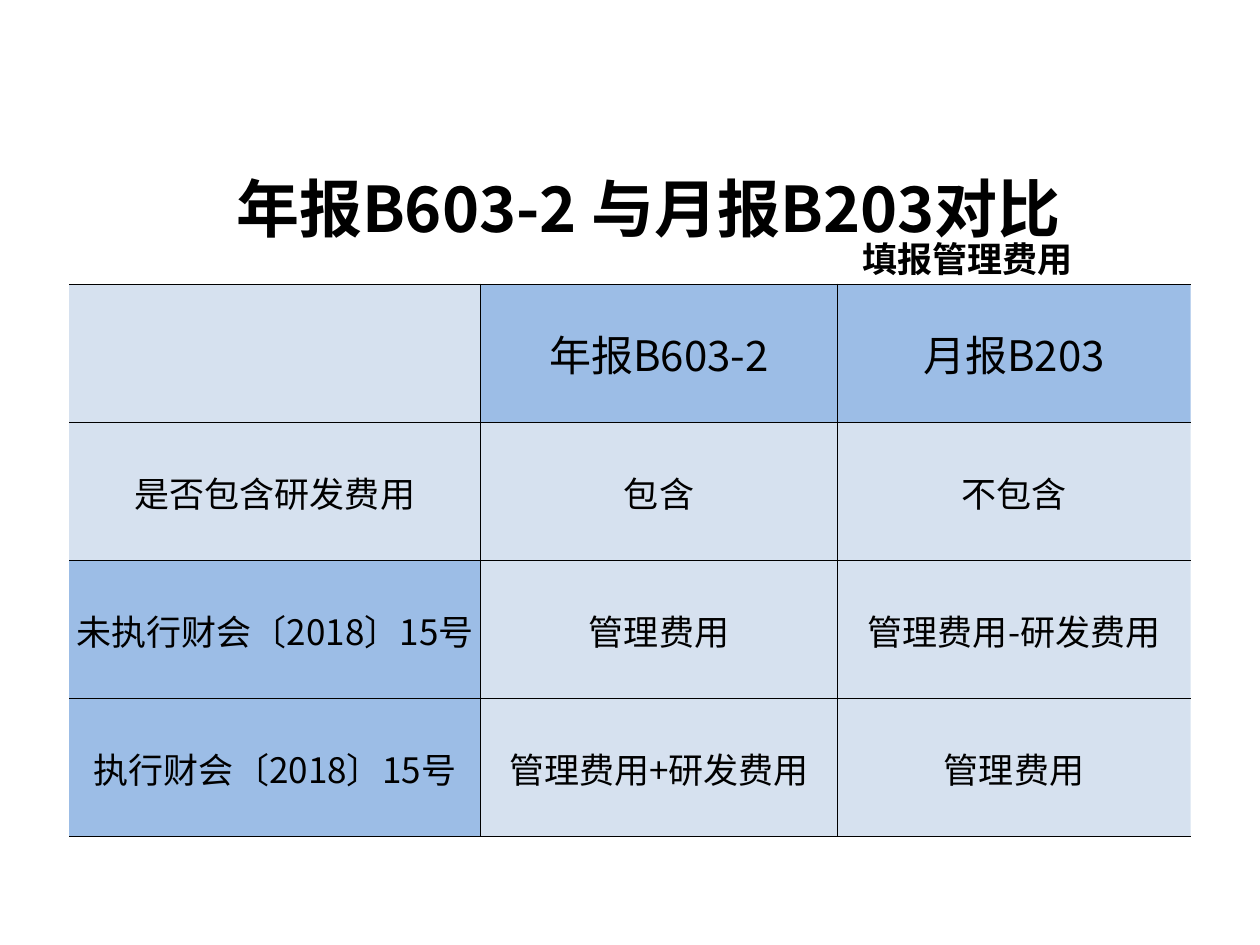
from dataclasses import dataclass

from lxml import etree
from pptx import Presentation
from pptx import util as u
from pptx.dml.color import RGBColor
from pptx.enum import text
from pptx.oxml.ns import qn


@dataclass(frozen=True)
class Theme:
    font: str = "Noto Sans CJK SC"
    ink: str = "000000"
    strong: str = "558ED5"
    pale: str = "B9CDE5"
    opacity: int = 58000
    title: int = 36
    header: int = 24
    body: int = 20
    rule: float = 0.5


THEME = Theme()
ROWS = [
    ["", "年报B603-2", "月报B203"],
    ["是否包含研发费用", "包含", "不包含"],
    ["未执行财会〔2018〕15号", "管理费用", "管理费用-研发费用"],
    ["执行财会〔2018〕15号", "管理费用+研发费用", "管理费用"],
]
STRONG_CELLS = {(0, 1), (0, 2), (2, 0), (3, 0)}


def write(para, words, size, bold=False, align=text.PP_ALIGN.CENTER, spacing=None):
    para.alignment = align
    para.line_spacing = spacing
    span = para.add_run()
    span.text = words
    span.font.name = THEME.font
    span.font.size = u.Pt(size)
    span.font.bold = bold
    span.font.color.rgb = RGBColor.from_string(THEME.ink)
    etree.SubElement(span.font._element, qn("a:ea"), typeface=THEME.font)


def add_heading(page, left, top, width, height):
    box = page.shapes.add_textbox(u.Pt(left), u.Pt(top), u.Pt(width), u.Pt(height))
    frame = box.text_frame
    frame.word_wrap = True
    frame.vertical_anchor = text.MSO_ANCHOR.BOTTOM
    frame.margin_bottom = 0
    write(frame.paragraphs[0], "年报B603-2 与月报B203对比", THEME.title, bold=True, spacing=0.82)
    write(frame.add_paragraph(), "填报管理费用", THEME.body, bold=True,
          align=text.PP_ALIGN.RIGHT, spacing=0.82)


def add_border(cell, side, visible):
    line = etree.SubElement(cell._tc.get_or_add_tcPr(), qn(f"a:ln{side}"),
                            w=str(u.Pt(THEME.rule)))
    if visible:
        fill = etree.SubElement(line, qn("a:solidFill"))
        etree.SubElement(fill, qn("a:srgbClr"), val=THEME.ink)
    else:
        etree.SubElement(line, qn("a:noFill"))


def fill_cell(cell, colour):
    cell.fill.solid()
    cell.fill.fore_color.rgb = RGBColor.from_string(colour)
    shade = cell._tc.tcPr.find(f"{qn('a:solidFill')}/{qn('a:srgbClr')}")
    etree.SubElement(shade, qn("a:alpha"), val=str(THEME.opacity))


def add_comparison(page, left, top, width, height):
    frame = page.shapes.add_table(len(ROWS), len(ROWS[0]), u.Pt(left), u.Pt(top),
                                  u.Pt(width), u.Pt(height))
    table = frame.table
    table.first_row = table.horz_banding = False
    for column, share in zip(table.columns, (0.367, 0.318, 0.315)):
        column.width = u.Pt(width * share)
    for row in table.rows:
        row.height = u.Pt(height / len(ROWS))
    last = len(ROWS[0]) - 1
    for r, entries in enumerate(ROWS):
        for c, words in enumerate(entries):
            cell = table.cell(r, c)
            cell.vertical_anchor = text.MSO_ANCHOR.MIDDLE
            cell.margin_left = cell.margin_right = cell.margin_top = u.Pt(0.7)
            cell.margin_bottom = 0
            for side, visible in (("L", c > 0), ("R", c < last), ("T", True), ("B", True)):
                add_border(cell, side, visible)
            fill_cell(cell, THEME.strong if (r, c) in STRONG_CELLS else THEME.pale)
            if words:
                write(cell.text_frame.paragraphs[0], words, THEME.body if r else THEME.header)


def main():
    deck = Presentation()
    deck.slide_width, deck.slide_height = u.Pt(720), u.Pt(540)
    page = deck.slides.add_slide(deck.slide_layouts[6])
    add_comparison(page, left=39.5, top=162.3, width=641, height=316)
    add_heading(page, left=121, top=91.5, width=499, height=68)
    deck.save("out.pptx")


if __name__ == "__main__":
    main()
